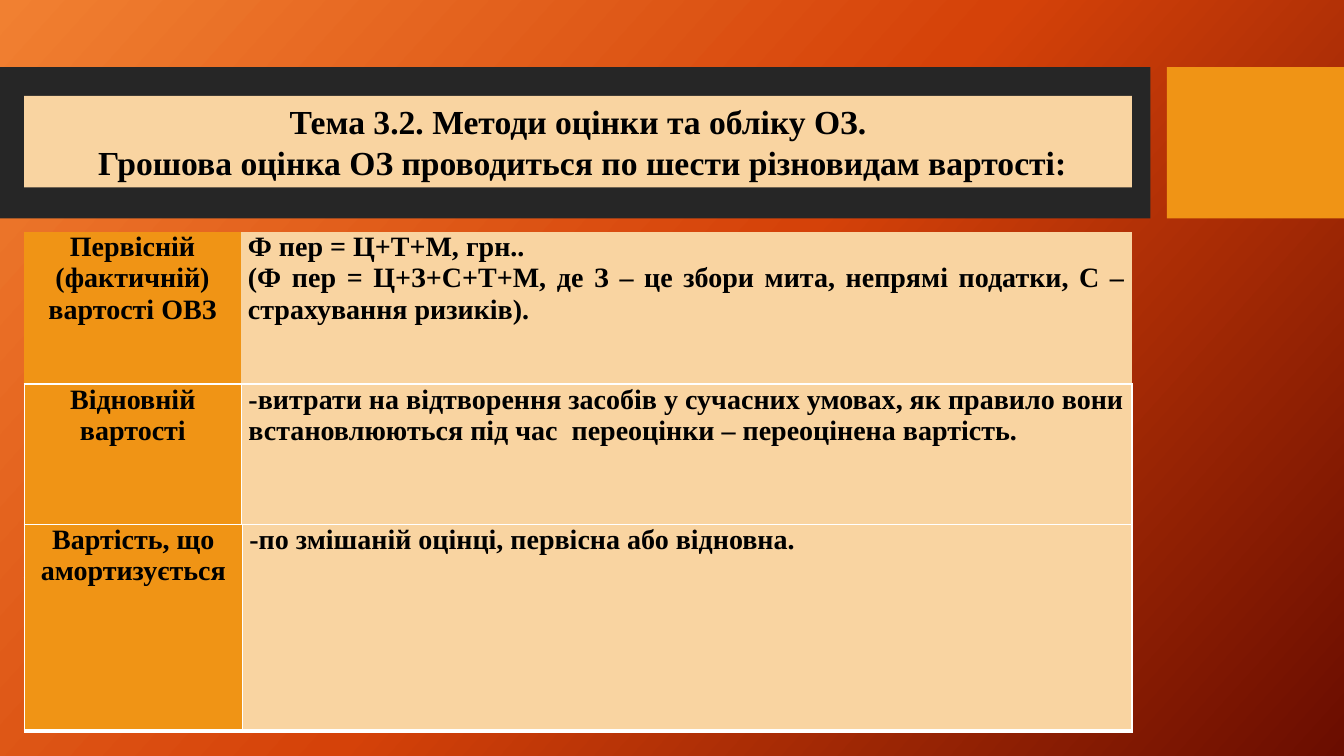
from copy import deepcopy
from pptx import Presentation
from pptx.dml.color import RGBColor
from pptx.enum.shapes import MSO_SHAPE
from pptx.enum.text import MSO_ANCHOR, MSO_AUTO_SIZE, PP_ALIGN
from pptx.oxml import parse_xml
from pptx.oxml.ns import nsdecls, qn
from pptx.util import Pt

HUES = {"dark": "262626", "gold": "F09415", "sand": "F9D4A1",
        "ink": "000000", "edge": "FFFFFF"}
GLOW = [(0, "F18031"), (0.5, "D54209"), (1, "6A0D00")]
EDGES = {"L": 1, "R": 1, "T": 1, "B": 3}
PLAIN = "{2D5ABB26-0587-4C30-8999-92F81FD0307C}"
LEFT, WIDTH = 17.28, 791.28


def hue(name):
    return RGBColor.from_string(HUES[name])


def apply(target, values):
    for key, value in values.items():
        setattr(target, key, value)


class Page:
    font = {"name": "Times New Roman", "bold": True}

    def __init__(self, deck):
        self.slide = deck.slides.add_slide(deck.slide_layouts[5])
        self.shapes = self.slide.shapes

    def back(self, stops, angle):
        fill = self.slide.background.fill
        fill.gradient()
        fill.gradient_angle = 360 - angle
        first = self.slide._element.find(".//" + qn("a:gs"))
        first.addnext(deepcopy(first))
        for stop, (place, color) in zip(fill.gradient_stops, stops):
            stop.position = place
            stop.color.rgb = RGBColor.from_string(color)

    def paint(self, fill, name):
        fill.solid()
        fill.fore_color.rgb = hue(name)

    def text(self, frame, lines, size, align):
        for i, line in enumerate(lines):
            para = frame.paragraphs[0] if i == 0 else frame.add_paragraph()
            para.text = line
            para.alignment = align
            for run in para.runs:
                apply(run.font, {**self.font, "size": Pt(size)})
                run.font.color.rgb = hue("ink")

    def bar(self, x, y, w, h, name):
        box = self.shapes.add_shape(MSO_SHAPE.RECTANGLE, Pt(x), Pt(y), Pt(w), Pt(h))
        box.shadow.inherit = False
        self.paint(box.fill, name)
        box.line.fill.background()

    def title(self, x, y, w, h, words):
        box = self.shapes.title
        self.shapes._spTree.append(box._element)  # bring in front of the bars
        apply(box, {"left": Pt(x), "top": Pt(y), "width": Pt(w), "height": Pt(h)})
        self.paint(box.fill, "sand")
        apply(box.text_frame, {"word_wrap": True, "vertical_anchor": MSO_ANCHOR.MIDDLE,
                               "auto_size": MSO_AUTO_SIZE.SHAPE_TO_FIT_TEXT})
        self.text(box.text_frame, [words], 24, PP_ALIGN.CENTER)

    def border(self, cell):
        props = cell._tc.get_or_add_tcPr()
        for side, width in EDGES.items():
            props.append(parse_xml(
                f'<a:ln{side} {nsdecls("a")} w="{Pt(width)}"><a:solidFill>'
                f'<a:srgbClr val="{HUES["edge"]}"/></a:solidFill></a:ln{side}>'))

    def table(self, y, h, split, term, lines, align, edged):
        frame = self.shapes.add_table(1, 2, Pt(LEFT), Pt(y), Pt(WIDTH), Pt(h))
        grid = frame.table
        frame._element.find(".//" + qn("a:tableStyleId")).text = PLAIN
        apply(grid, {"first_row": False, "horz_banding": False})
        parts = [(split, "gold", [term], PP_ALIGN.CENTER),
                 (WIDTH - split, "sand", lines, align)]
        for i, (width, name, words, side) in enumerate(parts):
            grid.columns[i].width = Pt(width)
            cell = grid.cell(0, i)
            apply(cell, {"margin_left": Pt(5), "margin_right": Pt(5),
                         "margin_top": 0, "margin_bottom": 0})
            if edged:
                self.border(cell)
            self.paint(cell.fill, name)
            self.text(cell.text_frame, words, 20, side)


def main():
    deck = Presentation()
    apply(deck, {"slide_width": Pt(960), "slide_height": Pt(540)})
    page = Page(deck)

    # Background and header
    page.back(GLOW, 42)
    page.bar(0, 48, 821.8, 108, "dark")
    page.bar(833.5, 48, 126.5, 108, "gold")
    page.title(LEFT, 68.4, WIDTH, 65.5,
               "Тема 3.2. Методи оцінки та обліку ОЗ.\v"
               " Грошова оцінка ОЗ проводиться по шести різновидам вартості:")

    # Kinds of value, each table overlapping the one above
    page.table(165.6, 159.84, 154.8, "Первісній (фактичній) вартості ОВЗ",
               ["Ф пер = Ц+Т+М, грн..",
                "(Ф пер = Ц+З+С+Т+М, де З – це збори мита, непрямі податки, "
                "С – страхування ризиків)."], PP_ALIGN.JUSTIFY, False)
    page.table(274.32, 138.96, 155.2, "Відновній вартості",
               ["-витрати на відтворення засобів у сучасних умовах, як правило "
                "вони встановлюються під час  переоцінки – переоцінена вартість."],
               PP_ALIGN.LEFT, True)
    page.table(374.4, 147.6, 155.9, "Вартість, що амортизується",
               ["-по змішаній оцінці, первісна або відновна."],
               PP_ALIGN.LEFT, True)
    deck.save("out.pptx")


if __name__ == "__main__":
    main()
